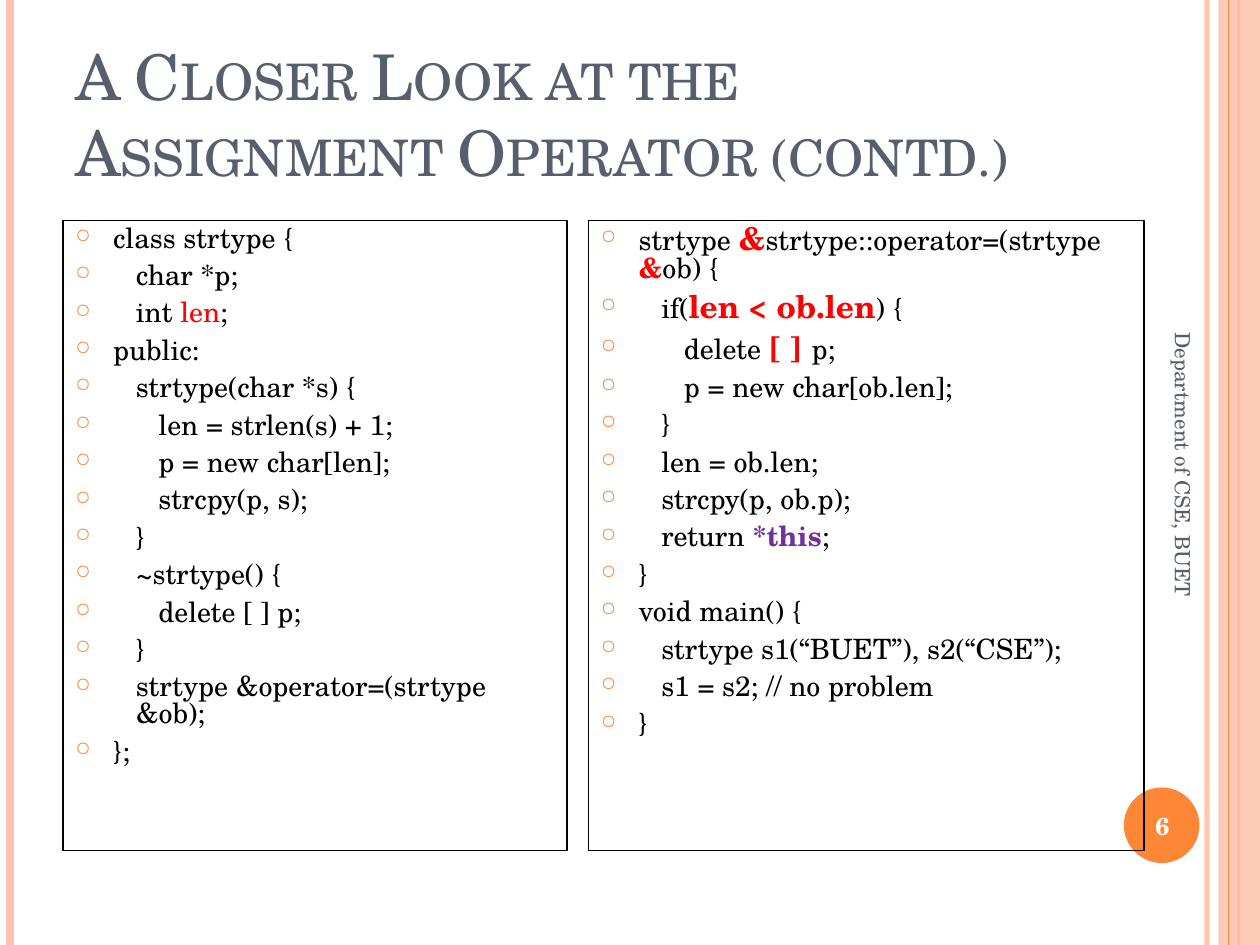
from lxml.etree import SubElement
from pptx import Presentation
from pptx.dml.color import RGBColor
from pptx.enum.shapes import MSO_CONNECTOR as Connector, MSO_SHAPE as Shape
from pptx.enum.text import MSO_ANCHOR as Anchor, PP_ALIGN as Align
from pptx.oxml.ns import qn
from pptx.util import Pt

EMU_PER_PX = 9144  # 100 px to the inch
WIDTH, HEIGHT = 1000, 750

FONT = "TeX Gyre Schola"
ORANGE, PEACH, SLATE = "FE8637", "FEC3AE", "575F6D"
BLACK, WHITE, RED, PURPLE = "000000", "FFFFFF", "FF0000", "7030A0"


def px(length):
    return length * EMU_PER_PX


def color(value):
    return RGBColor.from_string(value)


def set_alpha(fill, percent):
    fill_color = fill._xPr.find(qn("a:solidFill"))[0]
    SubElement(fill_color, qn("a:alpha"), val=str(percent * 1000))


class SlideBuilder:
    bullet, bullet_size = "○", 70
    text_indent, level_step = 30, 18
    line_spacing, space_before = 0.8, 6

    def __init__(self, slide):
        self.slide = slide

    def vertical_line(self, x, line_color, width, alpha=None):
        line = self.slide.shapes.add_connector(
            Connector.STRAIGHT, px(x), 0, px(x), px(HEIGHT))
        line.line.color.rgb = color(line_color)
        line.line.width = Pt(width)
        if alpha:
            set_alpha(line.line.fill, alpha)
        SubElement(line._element.spPr, qn("a:effectLst"))

    def shape(self, kind, box, fill, alpha=None):
        shape = self.slide.shapes.add_shape(kind, *map(px, box))
        shape.shadow.inherit = False
        shape.fill.solid()
        shape.fill.fore_color.rgb = color(fill)
        if alpha:
            set_alpha(shape.fill, alpha)
        shape.line.fill.background()

    def style_run(self, run, size, text_color=BLACK, bold=False):
        run.font.name = FONT
        run.font.size = Pt(size)
        run.font.bold = bold
        run.font.color.rgb = color(text_color)

    def text(self, box, text, size, text_color, anchor=Anchor.MIDDLE,
             align=Align.LEFT, bold=False, rotation=0, small_caps=False):
        shape = self.slide.shapes.add_textbox(*map(px, box))
        shape.rotation = rotation
        frame = shape.text_frame
        frame.word_wrap = True
        frame.vertical_anchor = anchor
        frame.text = text
        paragraph = frame.paragraphs[0]
        paragraph.alignment = align
        run = paragraph.runs[0]
        self.style_run(run, size, text_color, bold)
        if small_caps:
            run.font._element.set("cap", "small")

    def add_bullet(self, paragraph, level):
        properties = paragraph._p.get_or_add_pPr()
        indent = px(self.text_indent + level * self.level_step)
        properties.set("marL", str(indent))
        properties.set("indent", str(-indent))
        bullet_color = SubElement(properties, qn("a:buClr"))
        SubElement(bullet_color, qn("a:srgbClr"), val=ORANGE)
        SubElement(properties, qn("a:buSzPct"), val=str(self.bullet_size * 1000))
        SubElement(properties, qn("a:buChar"), char=self.bullet)

    def code_box(self, box, lines):
        """Each line is its nesting level, then plain strings or (text, style) pairs."""
        shape = self.slide.shapes.add_textbox(*map(px, box))
        shape.line.color.rgb = color(BLACK)
        shape.line.width = Pt(0.75)
        frame = shape.text_frame
        frame.word_wrap = True
        for index, (level, *parts) in enumerate(lines):
            paragraph = frame.add_paragraph() if index else frame.paragraphs[0]
            paragraph.line_spacing = self.line_spacing
            paragraph.space_before = Pt(self.space_before)
            self.add_bullet(paragraph, level)
            for part in parts:
                text, style = (part, {}) if isinstance(part, str) else part
                run = paragraph.add_run()
                run.text = text
                self.style_run(run, **{"size": 16, **style})


RED_TEXT = {"text_color": RED}
RED_BOLD = {"text_color": RED, "bold": True}
RED_LARGE = {**RED_BOLD, "size": 18}
PURPLE_BOLD = {"text_color": PURPLE, "bold": True}

CLASS_CODE = [
    (0, "class strtype {"),
    (1, "char *p;"),
    (1, "int ", ("len", RED_TEXT), ";"),
    (0, "public:"),
    (1, "strtype(char *s) {"),
    (2, "len = strlen(s) + 1;"),
    (2, "p = new char[len];"),
    (2, "strcpy(p, s);"),
    (1, "}"),
    (1, "~strtype() {"),
    (2, "delete [ ] p;"),
    (1, "}"),
    (1, "strtype &operator=(strtype &ob);"),
    (0, "};"),
]

OPERATOR_CODE = [
    (0, "strtype ", ("&", RED_LARGE), "strtype::operator=(strtype ",
     ("&", RED_BOLD), "ob) {"),
    (1, "if(", ("len < ob.len", RED_LARGE), ") {"),
    (2, "delete ", ("[ ] ", RED_LARGE), "p;"),
    (2, "p = new char[ob.len];"),
    (1, "}"),
    (1, "len = ob.len;"),
    (1, "strcpy(p, ob.p);"),
    (1, "return ", ("*this", PURPLE_BOLD), ";"),
    (0, "}"),
    (0, "void main() {"),
    (1, "strtype s1(“BUET”), s2(“CSE”);"),
    (1, "s1 = s2; // no problem"),
    (0, "}"),
]


def main():
    presentation = Presentation()
    presentation.slide_width, presentation.slide_height = px(WIDTH), px(HEIGHT)
    builder = SlideBuilder(
        presentation.slides.add_slide(presentation.slide_layouts[6]))

    # Edge stripes and page number disc
    builder.vertical_line(958, PEACH, 3, alpha=93)
    builder.vertical_line(8, PEACH, 4.5)
    builder.vertical_line(983, ORANGE, 1.5)
    builder.shape(Shape.RECTANGLE, (967, 0, 33, HEIGHT), PEACH, alpha=87)
    builder.vertical_line(975, ORANGE, 0.75)
    builder.shape(Shape.OVAL, (892, 625, 60, 60), ORANGE)

    # Title, footer and page number
    builder.text((50, 30, 817, 125),
                 "A Closer Look at the Assignment Operator (contd.)",
                 36, SLATE, anchor=Anchor.BOTTOM, small_caps=True)
    builder.text((764, 409, 350, 40), "Department of CSE, BUET",
                 12, SLATE, rotation=90)
    builder.text((889, 627, 67, 57), "6", 14, WHITE,
                 align=Align.CENTER, bold=True)

    # Code columns
    builder.code_box((50, 175, 400, 500), CLASS_CODE)
    builder.code_box((467, 175, 441, 500), OPERATOR_CODE)

    presentation.save("out.pptx")


if __name__ == "__main__":
    main()
